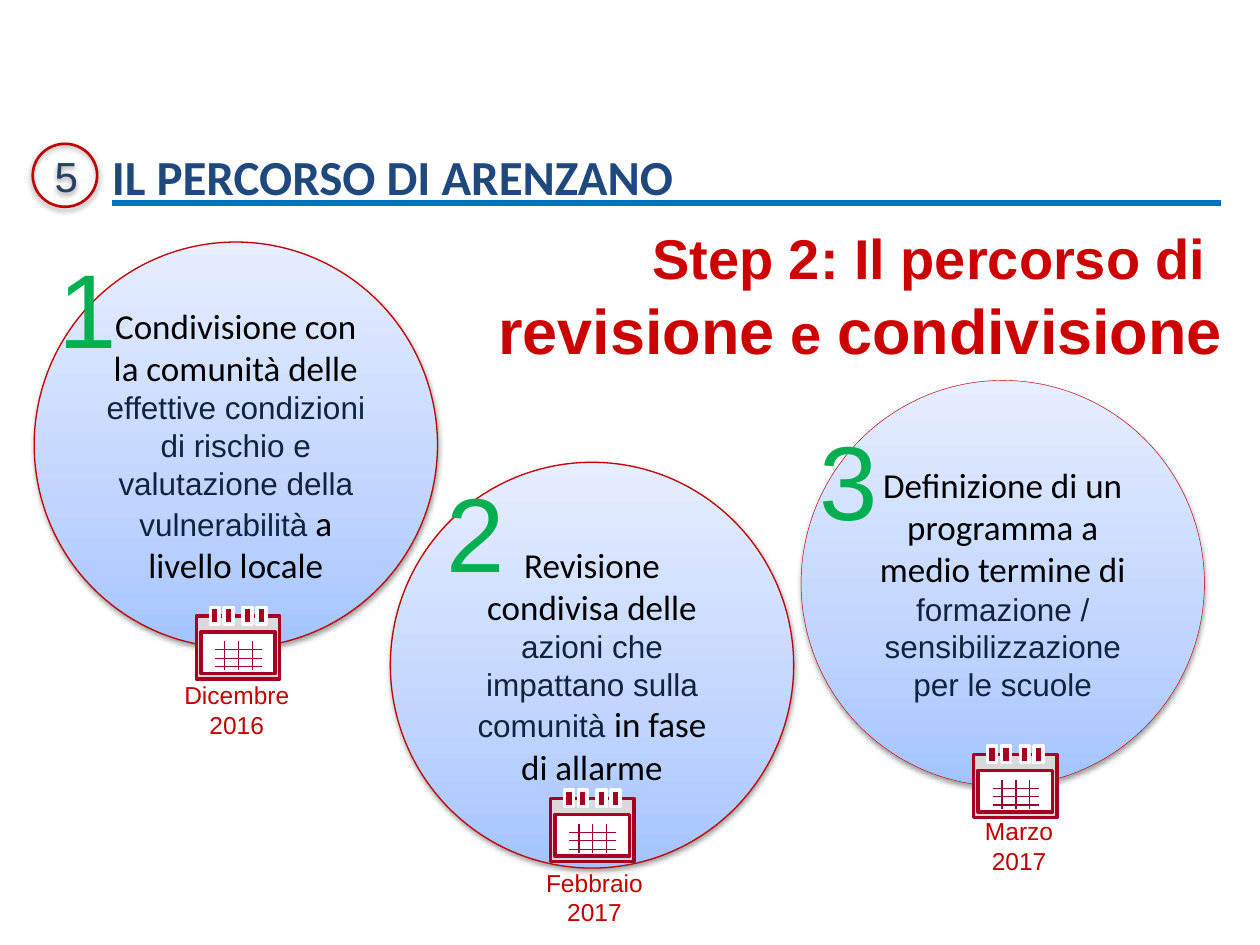
from copy import deepcopy

from lxml import etree
from pptx import Presentation
from pptx.dml.color import RGBColor
from pptx.enum import shapes, text
from pptx.oxml import ns
from pptx.util import Cm, Pt

rgb = RGBColor.from_string
OVAL, RECT = shapes.MSO_SHAPE.OVAL, shapes.MSO_SHAPE.RECTANGLE
CENTER = text.PP_ALIGN.CENTER
RED, GREEN, BLACK, NAVY = "C00000", "00B050", "000000", "0F243E"
CRIMSON = "A50021"


def add_box(parent, kind, x, y, w, h, fill, line, width):
    """Add a preset shape without shadow; fill None leaves it unfilled."""
    sp = parent.add_shape(kind, Cm(x), Cm(y), Cm(w), Cm(h))
    sp.shadow.inherit = False
    if fill:
        sp.fill.solid()
        sp.fill.fore_color.rgb = rgb(fill)
    else:
        sp.fill.background()
    sp.line.color.rgb = rgb(line)
    sp.line.width = Pt(width)
    return sp


def add_line(parent, x1, y1, x2, y2, color, width):
    ln = parent.add_connector(shapes.MSO_CONNECTOR.STRAIGHT, Cm(x1), Cm(y1), Cm(x2), Cm(y2))
    ln.line.color.rgb = rgb(color)
    ln.line.width = Pt(width)
    etree.SubElement(ln._element.spPr, ns.qn("a:effectLst"))


prs = Presentation()
prs.slide_width, prs.slide_height = Cm(25.4), Cm(19.05)
s = prs.slides.add_slide(prs.slide_layouts[5])

# Title, rule and section badge
title = s.shapes.title
title.left, title.top, title.width, title.height = Cm(2), Cm(2.82), Cm(21.6), Cm(2.82)
tf = title.text_frame
tf.text = "IL PERCORSO DI ARENZANO"
tf.auto_size = text.MSO_AUTO_SIZE.NONE
tf.vertical_anchor = text.MSO_ANCHOR.TOP
p = tf.paragraphs[0]
p.alignment = text.PP_ALIGN.LEFT
p.font.name, p.font.size, p.font.bold = "Calibri", Pt(28), True
p.font.color.rgb = rgb("1F497D")
add_line(s.shapes, 2.26, 4.09, 24.61, 4.09, "0070C0", 3)

badge = add_box(s.shapes, OVAL, 0.66, 2.9, 1.3, 1.27, None, RED, 1.5)
badge.text_frame.text = "5"
p = badge.text_frame.paragraphs[0]
p.alignment = CENTER
p.font.name, p.font.size = "Arial", Pt(24)
p.font.color.rgb = rgb("254061")
shadowed = [badge]

# Steps: circle, number, calendar and date positions; outline width; date; text
steps = [
    ((0.69, 4.88), (0.94, 4.78), (3.96, 12.42), (3.38, 13.59), 0.75, "Dicembre 2016",
     ("Condivisione con la comunità delle ",
      "effettive condizioni di rischio e valutazione della vulnerabilità",
      " a livello locale")),
    ((7.87, 9.32), (8.76, 9.3), (11.1, 16.1), (10.59, 17.37), 0.75, "Febbraio 2017",
     ("Revisione condivisa delle ",
      "azioni che impattano sulla comunità ",
      "in fase di allarme")),
    ((16.15, 7.67), (16.28, 8.26), (19.63, 15.21), (19.15, 16.33), 0.25, "Marzo 2017",
     ("Definizione di un programma a medio termine di ",
      "formazione / sensibilizzazione per le scuole")),
]
run_styles = [("Calibri", 20, BLACK), ("Arial", 18, NAVY), ("Calibri", 20, BLACK)]
gradient = [(0, "A4C4FF"), (0.35, "BFD4FF"), (1, "E6EEFF")]

for number, (circle_at, number_at, (cx, cy), date_at, outline, date, parts) in enumerate(steps, 1):
    circle = add_box(s.shapes, OVAL, *circle_at, 8.13, 8.18, None, RED, outline)
    shadowed.append(circle)
    circle.fill.gradient()
    circle.fill.gradient_angle = 90
    stops = circle._element.spPr.find(".//" + ns.qn("a:gsLst"))
    stops.insert(1, deepcopy(stops[0]))
    for stop, (position, color) in zip(circle.fill.gradient_stops, gradient):
        stop.position = position
        stop.color.rgb = rgb(color)
    p = circle.text_frame.paragraphs[0]
    p.alignment = CENTER
    for part, (font, size, color) in zip(parts, run_styles):
        r = p.add_run()
        r.text = part
        r.font.name, r.font.size = font, Pt(size)
        r.font.color.rgb = rgb(color)

    for label, (x, y), w, h, size, color, align in [
        (str(number), number_at, 2.57, 2.82, 60, GREEN, text.PP_ALIGN.LEFT),
        (date, date_at, 2.79, 1.45, 14, RED, CENTER),
    ]:
        tf = s.shapes.add_textbox(Cm(x), Cm(y), Cm(w), Cm(h)).text_frame
        tf.word_wrap = True
        tf.text = label
        p = tf.paragraphs[0]
        p.alignment = align
        p.font.name, p.font.size = "Arial", Pt(size)
        p.font.color.rgb = rgb(color)

    calendar = s.shapes.add_group_shape().shapes
    add_box(calendar, RECT, cx, cy, 1.68, 1.27, "D9D9D9", CRIMSON, 2)
    add_box(calendar, RECT, cx + 0.09, cy + 0.32, 1.5, 0.84, "FFFFFF", CRIMSON, 2)
    for i in range(3):
        row, col = cy + 0.68 + 0.17 * i, cx + 0.57 + 0.28 * i
        add_line(calendar, cx + 0.38, row, cx + 1.32, row, "990033", 0.75)
        add_line(calendar, col, cy + 0.51, col, cy + 1.09, "990033", 0.75)
    for dx in (0.28, 0.56, 0.94, 1.22):
        add_box(calendar, RECT, cx + dx, cy - 0.17, 0.18, 0.33, CRIMSON, "FFFFFF", 2)

# Soft shadow under the badge and the circles
for sp in shadowed:
    effects = sp._element.spPr.find(ns.qn("a:effectLst"))
    shadow = etree.SubElement(effects, ns.qn("a:outerShdw"), blurRad="40000",
                              dist="20000", dir="5400000", rotWithShape="0")
    color = etree.SubElement(shadow, ns.qn("a:srgbClr"), val=BLACK)
    etree.SubElement(color, ns.qn("a:alpha"), val="38000")

# Heading
tf = s.shapes.add_textbox(Cm(7.59), Cm(4.39), Cm(17.3), Cm(3.18)).text_frame
tf.word_wrap = True
heading = [
    [("Step 2: Il percorso di ", 32)],
    [("revisione", 36), (" e ", 32), ("condivisione", 36)],
]
for i, runs in enumerate(heading):
    p = tf.add_paragraph() if i else tf.paragraphs[0]
    p.alignment = text.PP_ALIGN.RIGHT
    p.font.name, p.font.bold = "Arial", True
    p.font.color.rgb = rgb("CC0000")
    for part, size in runs:
        r = p.add_run()
        r.text = part
        r.font.size = Pt(size)

prs.save("out.pptx")
